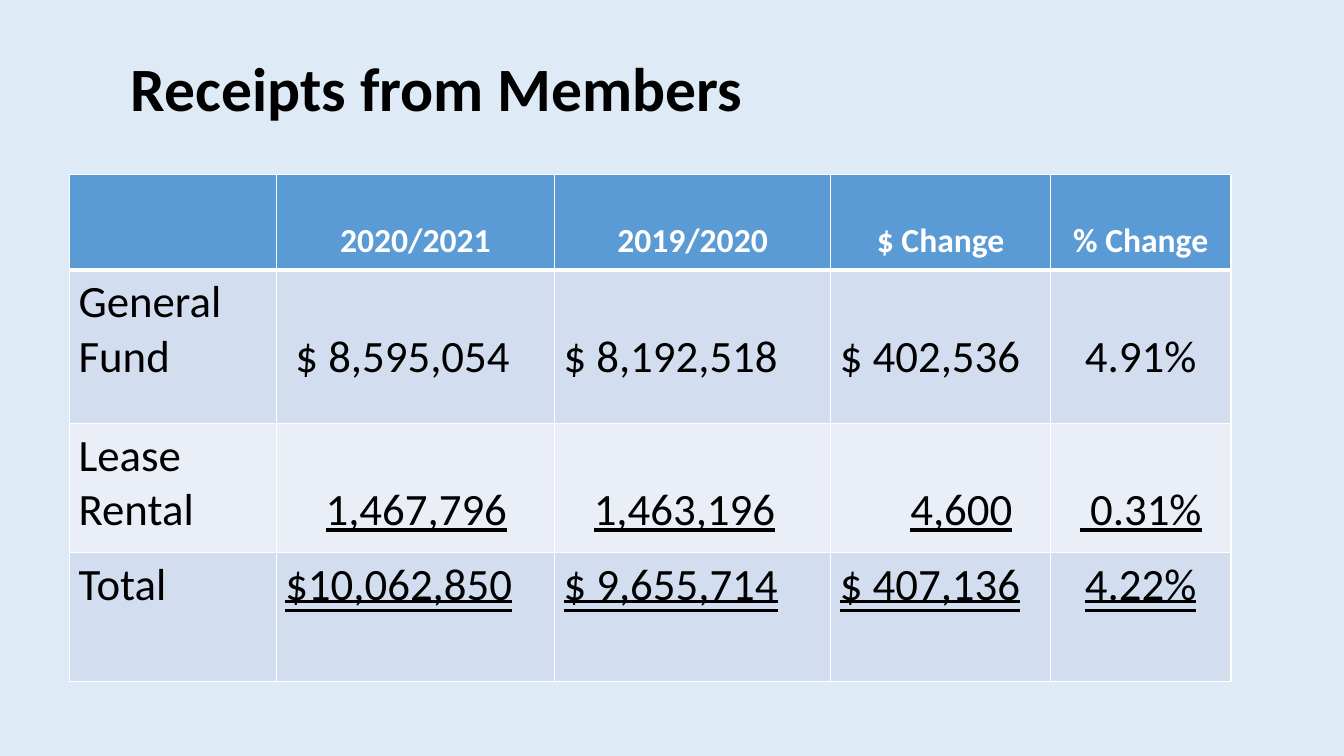
import pptx
import pptx.dml.color
import pptx.enum.text
import pptx.oxml
import pptx.oxml.ns
import pptx.util
from pptx.util import Inches

RGBColor = pptx.dml.color.RGBColor
BACKGROUND = RGBColor(0xDE, 0xEB, 0xF7)
HEADER = RGBColor(0x5B, 0x9B, 0xD5)
BAND_DARK = RGBColor(0xD2, 0xDE, 0xEF)
BAND_LIGHT = RGBColor(0xEA, 0xEF, 0xF7)
BLACK = RGBColor(0, 0, 0)
WHITE = RGBColor(0xFF, 0xFF, 0xFF)
FONT = "Calibri"
CENTER = pptx.enum.text.PP_ALIGN.CENTER
LEFT = pptx.enum.text.PP_ALIGN.LEFT
DOUBLE = pptx.enum.text.MSO_UNDERLINE.DOUBLE_LINE

COLUMN_WIDTHS = [2.05, 2.76, 2.74, 2.18, 1.79]
ROW_HEIGHTS = [0.95, 1.52, 1.28, 1.28]
RECEIPTS = [
    ["", "2020/2021", "2019/2020", "$ Change", "% Change"],
    ["General Fund", " $ 8,595,054", "$ 8,192,518", "$ 402,536", "4.91%"],
    ["Lease Rental", "\t1,467,796", "\t1,463,196", "\t4,600", " 0.31%"],
    ["Total", "$10,062,850", "$ 9,655,714", "$ 407,136", "4.22%"],
]
ROW_FILLS = [HEADER, BAND_DARK, BAND_LIGHT, BAND_DARK]
AMOUNT_UNDERLINES = [None, None, True, DOUBLE]
LINE_DROPS = [0.41, 0.54, 0.54, 0]  # amounts sit one text line down
TAB_STOPS = {1: 0.4, 2: 0.3, 3: 0.7}


def format_runs(p, size, color, bold=False, underline=None):
    for r in p.runs:
        r.font.name = FONT
        r.font.size = pptx.util.Pt(size)
        r.font.color.rgb = color
        r.font.bold = bold
        r.font.underline = underline


def add_title(s, text):
    tf = s.shapes.add_textbox(Inches(1.2), Inches(0.31), Inches(11), Inches(1.2)).text_frame
    tf.word_wrap = True
    tf.vertical_anchor = pptx.enum.text.MSO_ANCHOR.MIDDLE
    p = tf.paragraphs[0]
    p.text = text
    p.line_spacing = 0.9
    format_runs(p, 44, BLACK, bold=True)


def set_borders(cell, bottom):
    tc_pr = cell._tc.get_or_add_tcPr()
    for side, width in (("L", 1), ("R", 1), ("T", 1), ("B", bottom)):
        tc_pr.append(pptx.oxml.parse_xml(
            f'<a:ln{side} {pptx.oxml.ns.nsdecls("a")} w="{pptx.util.Pt(width)}">'
            f'<a:solidFill><a:srgbClr val="{WHITE}"/></a:solidFill></a:ln{side}>'))


def add_tab_stop(p, position):
    p._p.get_or_add_pPr().append(pptx.oxml.parse_xml(
        f'<a:tabLst {pptx.oxml.ns.nsdecls("a")}>'
        f'<a:tab pos="{Inches(position)}" algn="l"/></a:tabLst>'))


def fill_cell(cell, row, col):
    header = row == 0
    set_borders(cell, 3 if header else 1)
    cell.fill.solid()
    cell.fill.fore_color.rgb = ROW_FILLS[row]
    cell.margin_left = cell.margin_right = Inches(0.09)
    cell.margin_top = Inches(0.05 + (LINE_DROPS[row] if col else 0))
    cell.margin_bottom = Inches(0.05)
    text = RECEIPTS[row][col]
    p = cell.text_frame.paragraphs[0]
    p.text = text
    p.alignment = CENTER if header or col == 4 else LEFT
    if text.startswith("\t"):
        add_tab_stop(p, TAB_STOPS[col])
    format_runs(p, 24 if header else 32, WHITE if header else BLACK, bold=header,
                underline=AMOUNT_UNDERLINES[row] if col else None)


def add_receipts_table(s):
    table = s.shapes.add_table(
        len(ROW_HEIGHTS), len(COLUMN_WIDTHS), Inches(0.69), Inches(1.73),
        Inches(sum(COLUMN_WIDTHS)), Inches(sum(ROW_HEIGHTS))).table
    for column, width in zip(table.columns, COLUMN_WIDTHS):
        column.width = Inches(width)
    for row, height in enumerate(ROW_HEIGHTS):
        table.rows[row].height = Inches(height)
        for col in range(len(COLUMN_WIDTHS)):
            fill_cell(table.cell(row, col), row, col)


def main():
    prs = pptx.Presentation()
    prs.slide_width, prs.slide_height = Inches(13.33), Inches(7.5)
    s = prs.slides.add_slide(prs.slide_layouts[6])

    # Background
    s.background.fill.solid()
    s.background.fill.fore_color.rgb = BACKGROUND

    # Title and table
    add_title(s, "Receipts from Members")
    add_receipts_table(s)
    prs.save("out.pptx")


if __name__ == "__main__":
    main()
